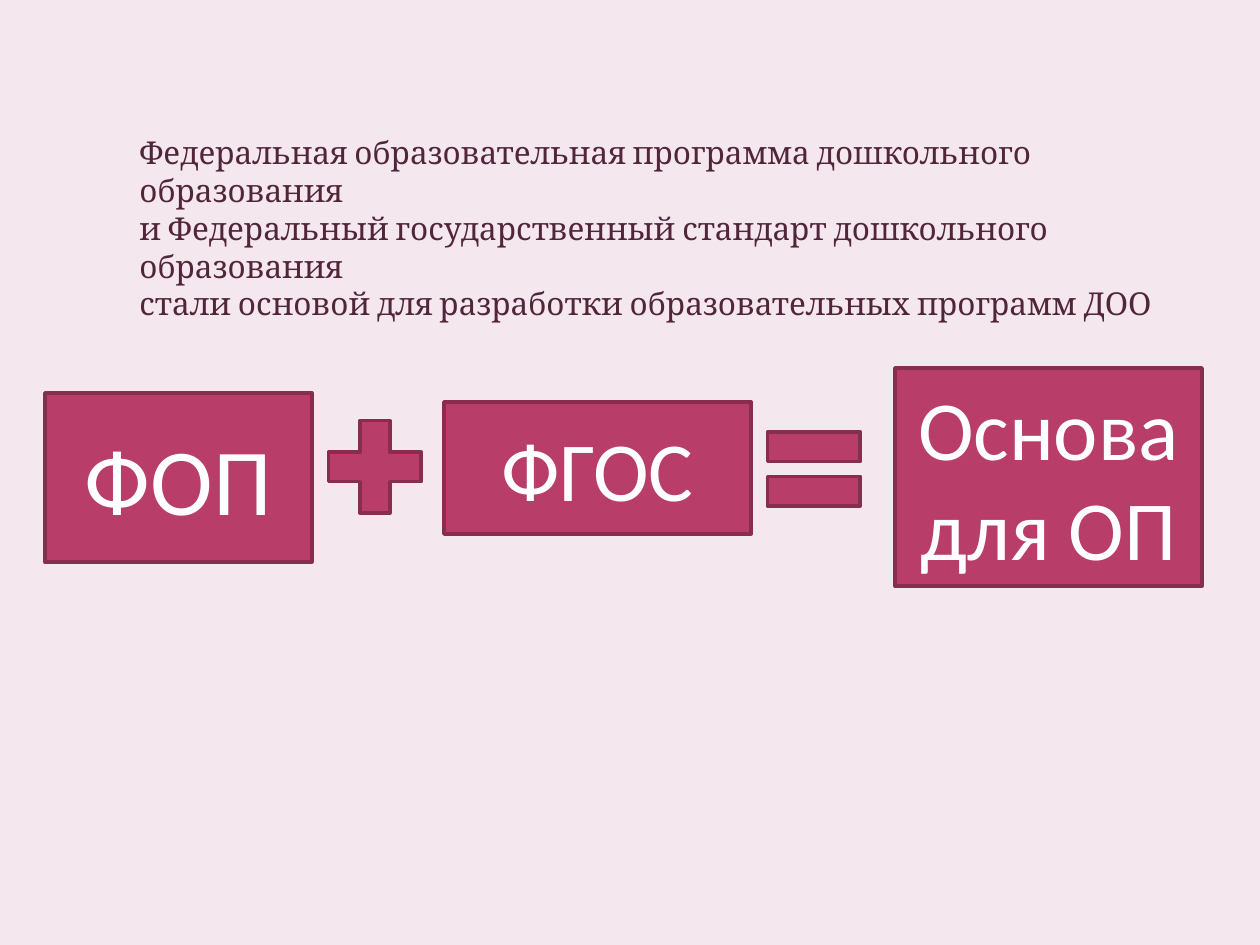
"""Build the slide showing that ФОП plus ФГОС form the basis of the ОП."""
from dataclasses import dataclass

from pptx import Presentation
from pptx.dml.color import RGBColor
from pptx.enum.shapes import MSO_SHAPE
from pptx.enum.text import MSO_ANCHOR, MSO_AUTO_SIZE, PP_ALIGN
from pptx.util import Emu, Pt

RECTANGLE = MSO_SHAPE.RECTANGLE
PLUS = MSO_SHAPE.MATH_PLUS
EQUAL = MSO_SHAPE.MATH_EQUAL
MIDDLE = MSO_ANCHOR.MIDDLE
CENTER = PP_ALIGN.CENTER
LEFT = PP_ALIGN.LEFT
FIT_SHAPE = MSO_AUTO_SIZE.SHAPE_TO_FIT_TEXT

BACKGROUND = RGBColor(0xF4, 0xE7, 0xED)
RASPBERRY = RGBColor(0xB8, 0x3D, 0x68)
BORDER = RGBColor(0x88, 0x2D, 0x4D)
WHITE = RGBColor(0xFF, 0xFF, 0xFF)
PLUM = RGBColor(0x51, 0x25, 0x3A)

EMU_PER_PX = 914400 / 126
SLIDE_SIZE = (1260, 945)
INTRO_BOX = (127, 127, 1075, 127)
INTRO = (
    "Федеральная образовательная программа дошкольного образования",
    "и Федеральный государственный стандарт дошкольного образования",
    "стали основой для разработки образовательных программ ДОО",
)


@dataclass(frozen=True)
class Term:
    """A term or sign of the equation, measured in px."""
    box: tuple[int, int, int, int]
    preset: MSO_SHAPE = RECTANGLE
    label: str = ""
    size: int = 48


EQUATION = (
    Term((45, 393, 267, 169), label="ФОП", size=54),
    Term((444, 402, 307, 132), label="ФГОС"),
    Term((895, 368, 307, 218), label="Основа для ОП"),
    Term((312, 404, 126, 126), PLUS),
    Term((751, 406, 126, 126), EQUAL),
)


def px(*lengths: int) -> list[Emu]:
    """Turn px into EMU."""
    return [Emu(round(length * EMU_PER_PX)) for length in lengths]


def add_run(paragraph, text: str, font: str, size: int, color: RGBColor) -> None:
    """Add one styled run to a paragraph."""
    run = paragraph.add_run()
    run.text = text
    run.font.name = font
    run.font.size = Pt(size)
    run.font.color.rgb = color


def draw_term(slide, term: Term) -> None:
    """Draw one part of the equation."""
    block = slide.shapes.add_shape(term.preset, *px(*term.box))
    block.shadow.inherit = False
    block.fill.solid()
    block.fill.fore_color.rgb = RASPBERRY
    block.line.color.rgb = BORDER
    block.line.width = Pt(2)
    if term.label:
        frame = block.text_frame
        frame.word_wrap = True
        frame.vertical_anchor = MIDDLE
        paragraph = frame.paragraphs[0]
        paragraph.alignment = CENTER
        add_run(paragraph, term.label, "Calibri", term.size, WHITE)


def draw_intro(slide) -> None:
    """Draw the statement above the equation."""
    frame = slide.shapes.add_textbox(*px(*INTRO_BOX)).text_frame
    frame.word_wrap = True
    frame.auto_size = FIT_SHAPE
    for index, sentence in enumerate(INTRO):
        paragraph = frame.add_paragraph() if index else frame.paragraphs[0]
        paragraph.alignment = LEFT
        add_run(paragraph, sentence, "Cambria", 18, PLUM)


def main() -> None:
    """Build and save the presentation."""
    deck = Presentation()
    deck.slide_width, deck.slide_height = px(*SLIDE_SIZE)
    slide = deck.slides.add_slide(deck.slide_layouts[6])
    slide.background.fill.solid()
    slide.background.fill.fore_color.rgb = BACKGROUND
    for term in EQUATION:
        draw_term(slide, term)
    draw_intro(slide)
    deck.save("out.pptx")


if __name__ == "__main__":
    main()
